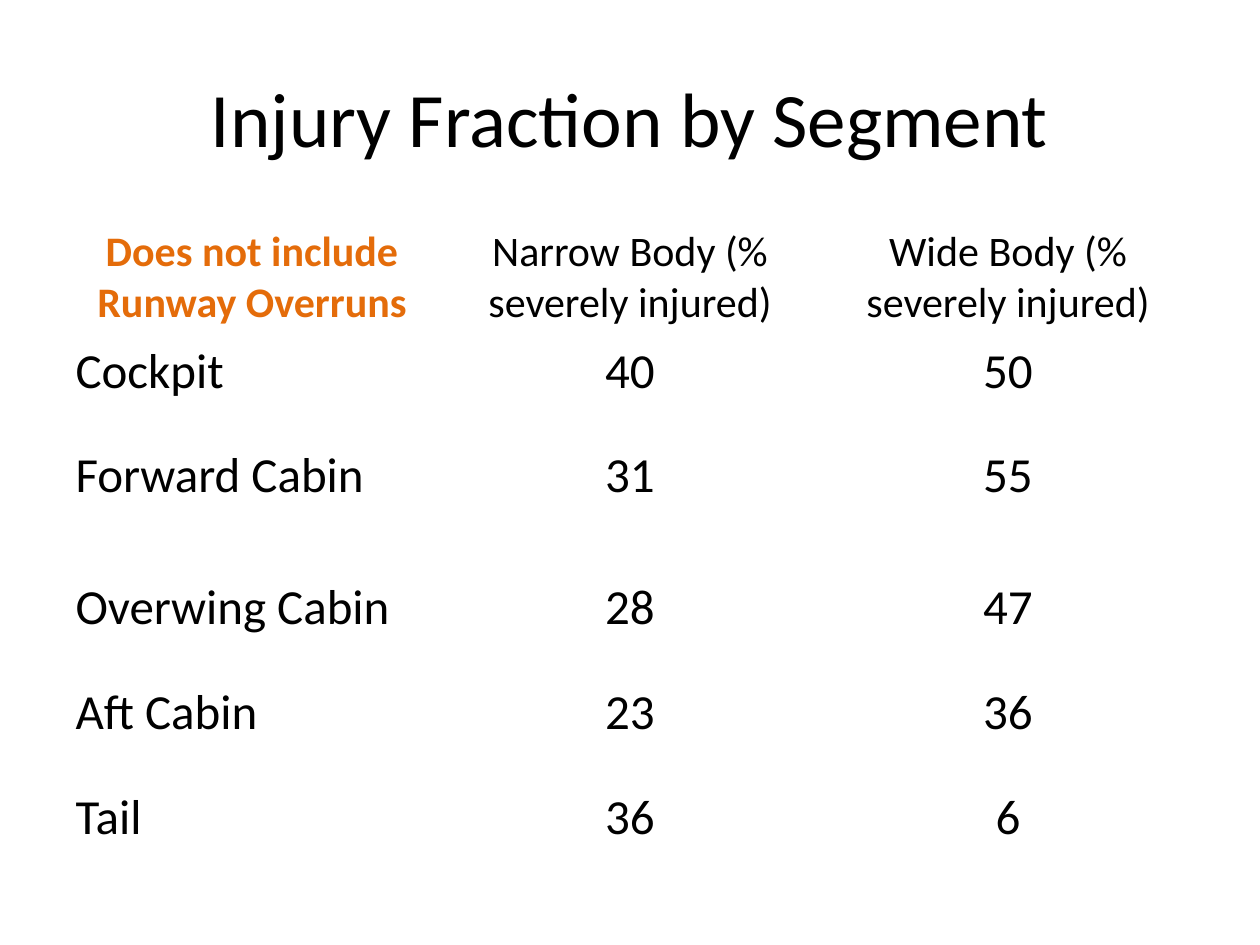
from pptx import Presentation
from pptx.dml.color import RGBColor
from pptx.enum.text import MSO_ANCHOR as ANCHOR, PP_ALIGN as ALIGN
from pptx.util import Inches, Pt


def rgb(value):
    return RGBColor.from_string(value)


class SlideBuilder:
    """Hold the style and the current slide, and add elements to it."""

    font = "Calibri"
    black = "000000"
    orange = "E46C0A"

    def __init__(self, prs):
        self.s = prs.slides.add_slide(prs.slide_layouts[6])

    def add_text(self, tf, text, size, align=ALIGN.CENTER, color=black, bold=False):
        p = tf.paragraphs[0]
        p.alignment = align
        r = p.add_run()
        r.text = text
        for name, value in {"name": self.font, "size": Pt(size), "bold": bold}.items():
            setattr(r.font, name, value)
        r.font.color.rgb = rgb(color)

    def title(self, text, left, top, width, height):
        sp = self.s.shapes.add_textbox(*map(Inches, (left, top, width, height)))
        tf = sp.text_frame
        for name, value in {"word_wrap": True, "vertical_anchor": ANCHOR.MIDDLE}.items():
            setattr(tf, name, value)
        self.add_text(tf, text, 44)

    def table(self, rows, heights, left, top, width):
        size = len(rows), len(rows[0])
        box = map(Inches, (left, top, width, sum(heights)))
        table = self.s.shapes.add_table(*size, *box).table
        for name, value in {"first_row": False, "horz_banding": False}.items():
            setattr(table, name, value)
        for i, (values, height) in enumerate(zip(rows, heights)):
            table.rows[i].height = Inches(height)
            for j, text in enumerate(values):
                cell = table.cell(i, j)
                cell.fill.background()
                corner = i == j == 0
                self.add_text(
                    cell.text_frame,
                    text,
                    28 if i else 24,
                    ALIGN.LEFT if i and j == 0 else ALIGN.CENTER,
                    self.orange if corner else self.black,
                    corner,
                )


def main():
    prs = Presentation()
    prs.slide_width, prs.slide_height = Inches(10), Inches(7.5)
    slide = SlideBuilder(prs)
    slide.title("Injury Fraction by Segment", 0.5, 0.3, 9, 1.25)
    rows = [
        ("Does not include Runway Overruns", "Narrow Body (% severely injured)",
         "Wide Body (% severely injured)"),
        ("Cockpit", "40", "50"),
        ("Forward Cabin", "31", "55"),
        ("Overwing Cabin", "28", "47"),
        ("Aft Cabin", "23", "36"),
        ("Tail", "36", "6"),
    ]
    slide.table(rows, [0.91, 0.83, 1.05, 0.83, 0.83, 0.83], 0.5, 1.75, 9)
    prs.save("out.pptx")


if __name__ == "__main__":
    main()
